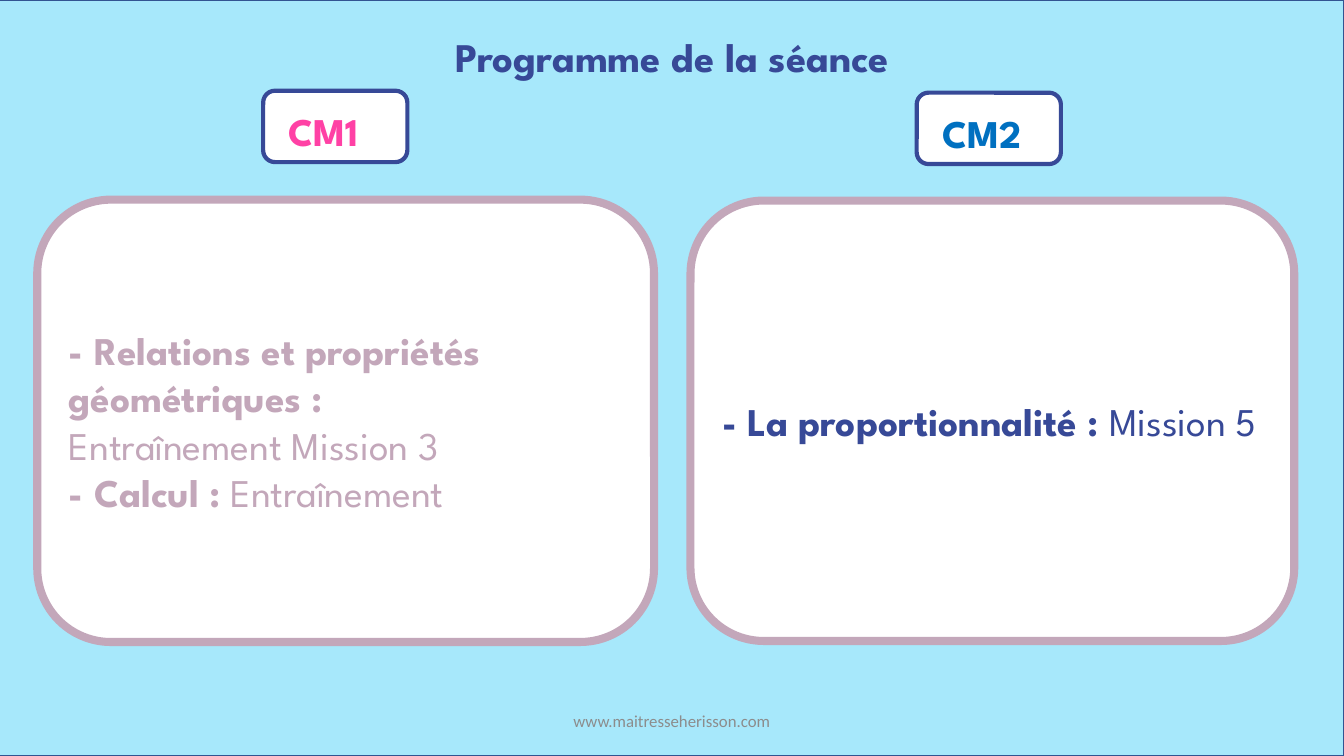
"""Build the lesson programme slide for the CM1 and CM2 groups."""
import dataclasses

import lxml.etree
import pptx
import pptx.dml.color
import pptx.enum.shapes
import pptx.enum.text
import pptx.oxml.ns
import pptx.util

Pt = pptx.util.Pt
ALIGN = pptx.enum.text.PP_ALIGN
ANCHOR = pptx.enum.text.MSO_ANCHOR
SHAPE = pptx.enum.shapes.MSO_SHAPE


@dataclasses.dataclass(frozen=True)
class Theme:
    sky: str = "A7E8FB"
    edge: str = "325491"
    white: str = "FFFFFF"
    navy: str = "374997"
    mauve: str = "C3A7BA"
    pink: str = "FF41A5"
    blue: str = "0070C0"
    grey: str = "8C8C8C"
    font: str = "League Spartan"
    footer_font: str = "Calibri"
    title_size: float = 29
    text_size: float = 28
    footer_size: float = 12


class Deck:
    def __init__(self, theme):
        self.theme = theme
        self.prs = pptx.Presentation()
        self.prs.slide_width, self.prs.slide_height = Pt(960), Pt(540)
        self.s = self.prs.slides.add_slide(self.prs.slide_layouts[3])

    def box(self, kind, area, fill, line, width):
        sp = self.s.shapes.add_shape(kind, *map(Pt, area))
        sp.shadow.inherit = False
        sp.fill.solid()
        sp.fill.fore_color.rgb = pptx.dml.color.RGBColor.from_string(fill)
        sp.line.color.rgb = pptx.dml.color.RGBColor.from_string(line)
        sp.line.width = Pt(width)

    def style(self, r, color, size, bold, font=None):
        r.font.name = font or self.theme.font
        r.font.size = Pt(size)
        r.font.bold = bold
        r.font.color.rgb = pptx.dml.color.RGBColor.from_string(color)

    def frame(self, sp, anchor):
        tf = sp.text_frame
        tf.word_wrap = True
        tf.auto_size = pptx.enum.text.MSO_AUTO_SIZE.NONE
        tf.vertical_anchor = anchor
        return tf

    def set_text(self, sp, text, color, size, bold, font, align, anchor):
        tf = self.frame(sp, anchor)
        tf.text = text
        p = tf.paragraphs[0]
        p.alignment = align
        self.style(p.runs[0], color, size, bold, font)

    def label(self, text, area, color, size, bold=True, font=None,
              align=ALIGN.LEFT, anchor=ANCHOR.TOP):
        sp = self.s.shapes.add_textbox(*map(Pt, area))
        self.set_text(sp, text, color, size, bold, font, align, anchor)

    def place(self, sp, area):
        sp.left, sp.top, sp.width, sp.height = map(Pt, area)
        sp.element.getparent().append(sp.element)

    def title(self, text, area):
        sp = self.s.shapes.title
        self.place(sp, area)
        self.set_text(sp, text, self.theme.navy, self.theme.title_size, True,
                      None, ALIGN.CENTER, ANCHOR.TOP)

    def badge(self, text, left, top, color):
        self.box(SHAPE.ROUNDED_RECTANGLE, (left, top, 103, 51),
                 self.theme.white, self.theme.navy, 3)
        self.label(text, (left + 11, top + 8, 79, 41), color, self.theme.text_size)

    def panel(self, idx, area, color, items):
        self.box(SHAPE.ROUNDED_RECTANGLE, area,
                 self.theme.white, self.theme.mauve, 5.75)
        left, top, width, height = area
        inset = 15.4
        sp = self.s.placeholders[idx]
        self.place(sp, (left + inset, top + inset,
                        width - 2 * inset, height - 2 * inset))
        tf = self.frame(sp, ANCHOR.MIDDLE)
        for i, (heading, detail) in enumerate(items):
            p = tf.add_paragraph() if i else tf.paragraphs[0]
            pPr = p._p.get_or_add_pPr()
            pPr.set("marL", "0")
            pPr.set("indent", "0")
            lxml.etree.SubElement(pPr, pptx.oxml.ns.qn("a:buNone"))
            p.space_before = Pt(0)
            p.alignment = ALIGN.LEFT
            for text, bold in ((heading, True), (detail, False)):
                if text:
                    r = p.add_run()
                    r.text = text
                    self.style(r, color, self.theme.text_size, bold)


def main():
    theme = Theme()
    deck = Deck(theme)
    deck.box(SHAPE.RECTANGLE, (-0.5, 0, 960, 540), theme.sky, theme.edge, 1)
    deck.badge("CM1", 188, 64.8, theme.pink)
    deck.panel(1, (26.6, 142.6, 440.6, 316), theme.mauve, [
        ("- Relations et propriétés géométriques :", ""),
        ("", "Entraînement Mission 3"),
        ("- Calcul : ", "Entraînement"),
    ])
    deck.panel(2, (493.2, 143.3, 431.3, 314.6), theme.navy, [
        ("- La proportionnalité : ", "Mission 5"),
    ])
    deck.title("Programme de la séance", (0.5, 19.4, 960, 42.5))
    deck.badge("CM2", 654.8, 66.2, theme.blue)
    deck.label("www.maitresseherisson.com", (318, 500.4, 324, 28.8), theme.grey,
               theme.footer_size, False, theme.footer_font,
               ALIGN.CENTER, ANCHOR.MIDDLE)
    deck.prs.save("out.pptx")


if __name__ == "__main__":
    main()
